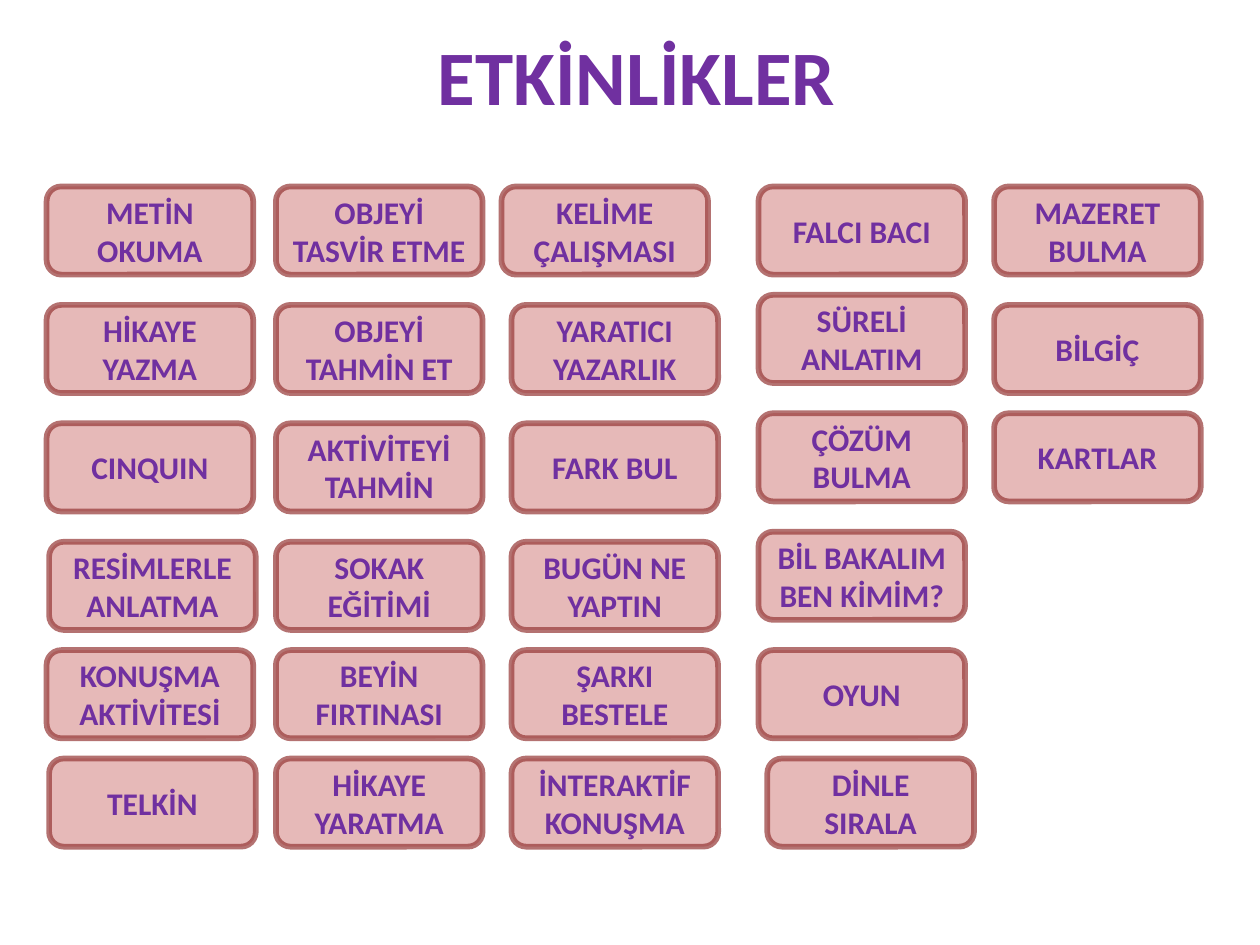
from itertools import accumulate
from pptx import Presentation
from pptx.dml.color import RGBColor
from pptx.enum.shapes import MSO_SHAPE
from pptx.enum.text import MSO_ANCHOR, PP_ALIGN
from pptx.oxml.ns import qn
from pptx.util import Inches, Pt
from lxml import etree

BOX = MSO_SHAPE.FLOWCHART_ALTERNATE_PROCESS
MIDDLE = MSO_ANCHOR.MIDDLE
CENTER = PP_ALIGN.CENTER
PURPLE, PINK, RED = "7030A0", "E6B9B8", "953735"


def color(code):
    return RGBColor.from_string(code)


def write(shape, text, size):
    """Fill a shape with one centred line of bold purple text."""
    frame = shape.text_frame
    frame.word_wrap = True
    frame.vertical_anchor = MIDDLE
    frame.text = text
    para = frame.paragraphs[0]
    para.alignment = CENTER
    font = para.font
    font.name, font.size, font.bold = "Calibri", Pt(size), True
    font.color.rgb = color(PURPLE)


deck = Presentation()
deck.slide_width, deck.slide_height = Inches(10), Inches(7.5)
slide = deck.slides.add_slide(deck.slide_layouts[5])

title = slide.shapes.title
title.left, title.top = Inches(1.85), Inches(0)
title.width, title.height = Inches(6.41), Inches(1.18)
write(title, "ETKİNLİKLER", 44)

# Boxes follow each other down a column by a wide or a tight step
WIDE, TIGHT = 0.94, 0.86
TOP, WIDTH, HEIGHT = 1.48, 1.64, 0.7
usual = [WIDE, WIDE, WIDE, TIGHT, TIGHT]

columns = [
    (0.37, usual, ["METİN OKUMA", "HİKAYE YAZMA", "CINQUIN",
                   "RESİMLERLE ANLATMA", "KONUŞMA AKTİVİTESİ", "TELKİN"]),
    (2.19, usual, ["OBJEYİ TASVİR ETME", "OBJEYİ TAHMİN ET",
                   "AKTİVİTEYİ TAHMİN", "SOKAK EĞİTİMİ",
                   "BEYİN FIRTINASI", "HİKAYE YARATMA"]),
    (4.06, usual, ["KELİME ÇALIŞMASI", "YARATICI YAZARLIK", "FARK BUL",
                   "BUGÜN NE YAPTIN", "ŞARKI BESTELE",
                   "İNTERAKTİF KONUŞMA"]),
    (6.02, [TIGHT, WIDE, WIDE, WIDE, TIGHT],
     ["FALCI BACI", "SÜRELİ ANLATIM", "ÇÖZÜM BULMA",
      "BİL BAKALIM BEN KİMİM?", "OYUN", "DİNLE SIRALA"]),
    (7.89, [WIDE, TIGHT], ["MAZERET BULMA", "BİLGİÇ", "KARTLAR"]),
]
# Boxes that stand a little to the side of their column
nudge = {"RESİMLERLE ANLATMA": 0.02, "TELKİN": 0.02,
         "KELİME ÇALIŞMASI": -0.08, "DİNLE SIRALA": 0.07}

for left, steps, names in columns:
    for top, name in zip(accumulate(steps, initial=TOP), names):
        box = slide.shapes.add_shape(
            BOX, Inches(left + nudge.get(name, 0)), Inches(top),
            Inches(WIDTH), Inches(HEIGHT))
        box.shadow.inherit = False
        box.fill.solid()
        box.fill.fore_color.rgb = color(PINK)
        box.line.color.rgb = color(RED)
        box.line.width = Pt(3.25)
        tint = box.line._ln.find(".//" + qn("a:srgbClr"))
        etree.SubElement(tint, qn("a:alpha"), val="69000")
        write(box, name, 18)

deck.save("out.pptx")
